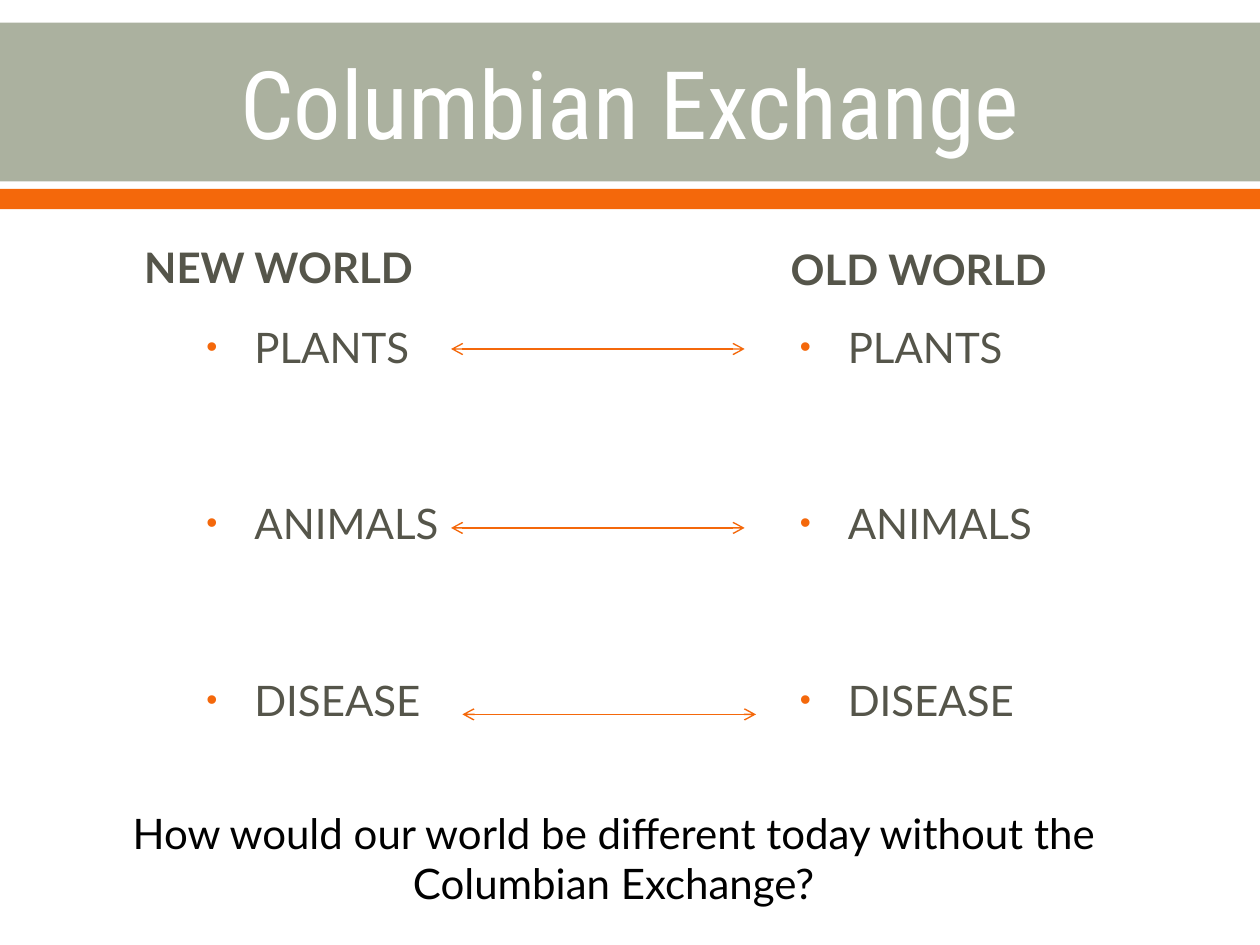
from dataclasses import dataclass

from lxml.etree import SubElement
from pptx import Presentation
from pptx.dml.color import RGBColor as RGB
from pptx.enum.shapes import MSO_CONNECTOR as Connector, MSO_SHAPE as Shape
from pptx.enum.text import MSO_ANCHOR as Anchor, PP_ALIGN as Align
from pptx.oxml.ns import qn
from pptx.util import Inches, Pt


@dataclass(frozen=True)
class Theme:
    sage: RGB = RGB(0xAB, 0xB1, 0x9F)
    orange: RGB = RGB(0xF4, 0x68, 0x0B)
    olive: RGB = RGB(0x55, 0x55, 0x4A)
    white: RGB = RGB(0xFF, 0xFF, 0xFF)
    black: RGB = RGB(0, 0, 0)
    title_font: str = "Roboto Condensed"
    body_font: str = "Lato"
    title_size: Pt = Pt(54)
    body_size: Pt = Pt(24)
    item_gap: Pt = Pt(72)
    line_width: Pt = Pt(0.79)


THEME = Theme()
TOPICS = ["PLANTS", "ANIMALS", "DISEASE"]
# Heading text, heading left and top, list left
COLUMNS = [("NEW WORLD", 0, 1.67, 1.54), ("OLD WORLD", 5.08, 1.68, 6.25)]
# Left end and height of each arrow
ARROWS = [(3.58, 2.77), (3.58, 4.19), (3.67, 5.67)]
ARROW_LENGTH = 2.33
COLUMN_WIDTH = 4.42


def write(p, text, font=THEME.body_font, size=THEME.body_size,
          color=THEME.olive, bold=False, align=Align.LEFT):
    p.alignment = align
    r = p.add_run()
    r.text = text
    r.font.name, r.font.size, r.font.bold = font, size, bold
    r.font.color.rgb = color


def add_text_frame(s, x, y, w, h, anchor=Anchor.TOP):
    tf = s.shapes.add_textbox(Inches(x), Inches(y), Inches(w), Inches(h)).text_frame
    tf.word_wrap = True
    tf.vertical_anchor = anchor
    return tf


def add_band(s, y, h, color):
    sp = s.shapes.add_shape(Shape.RECTANGLE, 0, Inches(y), Inches(10), Inches(h))
    sp.shadow.inherit = False
    sp.fill.solid()
    sp.fill.fore_color.rgb = color
    sp.line.fill.background()
    # Keep the band behind the title
    s.shapes.title.element.addprevious(sp.element)


def add_title(s, text):
    title = s.shapes.title
    title.left, title.top = Inches(0.5), Inches(0.2)
    title.width, title.height = Inches(9), Inches(1.22)
    tf = title.text_frame
    tf.vertical_anchor = Anchor.MIDDLE
    write(tf.paragraphs[0], text, font=THEME.title_font, size=THEME.title_size,
          color=THEME.white, align=Align.CENTER)


def add_bullet(p):
    pPr = p._p.get_or_add_pPr()
    pPr.set("marL", str(Inches(0.38)))
    pPr.set("indent", str(-Inches(0.38)))
    color = SubElement(pPr, qn("a:buClr"))
    SubElement(color, qn("a:srgbClr"), val=str(THEME.orange))
    SubElement(pPr, qn("a:buSzPct"), val="75000")
    SubElement(pPr, qn("a:buFont"), typeface="Arial")
    SubElement(pPr, qn("a:buChar"), char="•")


def add_topic_list(s, x, topics):
    tf = add_text_frame(s, x, 2.5, COLUMN_WIDTH, 4.32)
    for i, topic in enumerate(topics):
        p = tf.paragraphs[0] if i == 0 else tf.add_paragraph()
        p.space_before = THEME.item_gap if i else Pt(0)
        add_bullet(p)
        write(p, topic)


def add_double_arrow(s, x, y):
    line = s.shapes.add_connector(Connector.STRAIGHT, Inches(x), Inches(y),
                                  Inches(x + ARROW_LENGTH), Inches(y))
    line.line.color.rgb = THEME.orange
    line.line.width = THEME.line_width
    ln = line.line._get_or_add_ln()
    for end in ("a:headEnd", "a:tailEnd"):
        SubElement(ln, qn(end), type="arrow")
    SubElement(line.element.spPr, qn("a:effectLst"))


def main():
    prs = Presentation()
    prs.slide_width, prs.slide_height = Inches(10), Inches(7.5)
    s = prs.slides.add_slide(prs.slide_layouts[5])

    # Title on its bands
    add_band(s, 0.18, 1.26, THEME.sage)
    add_band(s, 1.5, 0.16, THEME.orange)
    add_title(s, "Columbian Exchange")

    # The two worlds
    for heading, x, y, list_x in COLUMNS:
        tf = add_text_frame(s, x, y, COLUMN_WIDTH, 0.7, Anchor.BOTTOM)
        write(tf.paragraphs[0], heading, bold=True, align=Align.CENTER)
        add_topic_list(s, list_x, TOPICS)

    # Exchanges between them
    for x, y in ARROWS:
        add_double_arrow(s, x, y)

    # Closing question
    tf = add_text_frame(s, 0.58, 6.36, 8.58, 0.91)
    write(tf.paragraphs[0],
          "How would our world be different today without the Columbian Exchange?",
          color=THEME.black, align=Align.CENTER)

    prs.save("out.pptx")


if __name__ == "__main__":
    main()
